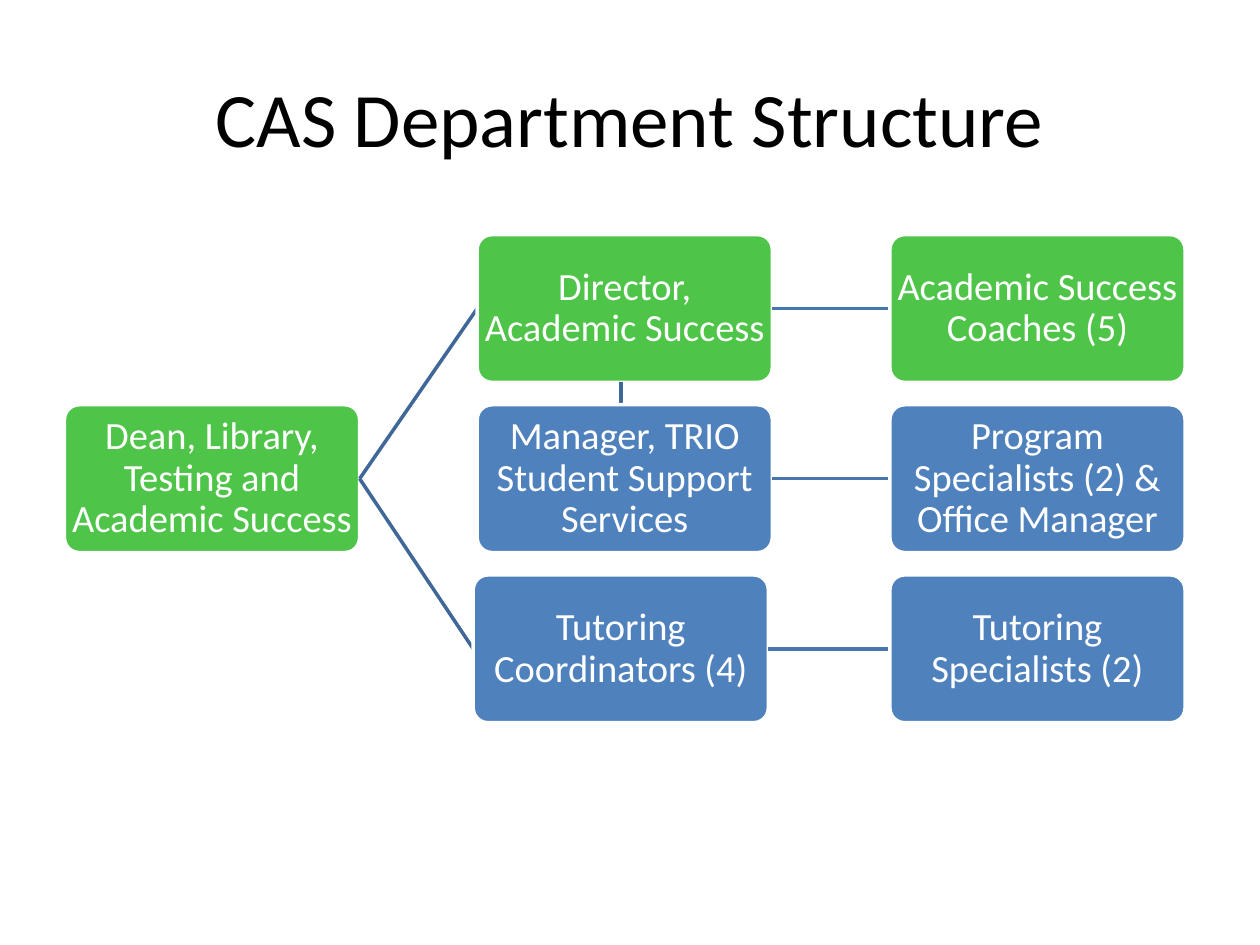
from dataclasses import dataclass

from lxml import etree
from pptx import Presentation
from pptx.dml.color import RGBColor
from pptx.enum.shapes import MSO_CONNECTOR, MSO_SHAPE
from pptx.enum.text import MSO_ANCHOR, PP_ALIGN
from pptx.oxml.ns import qn
from pptx.shapes.autoshape import Shape
from pptx.shapes.connector import Connector
from pptx.slide import Slide
from pptx.util import Cm, Pt

STRAIGHT = MSO_CONNECTOR.STRAIGHT
ROUNDED = MSO_SHAPE.ROUNDED_RECTANGLE
MIDDLE = MSO_ANCHOR.MIDDLE
CENTER = PP_ALIGN.CENTER
LEFT_SITE, RIGHT_SITE = 1, 3


@dataclass(frozen=True)
class Theme:
    font: str = "Calibri"
    title_size: Pt = Pt(44)
    box_size: Pt = Pt(22)
    line_width: Pt = Pt(2)
    black: RGBColor = RGBColor(0, 0, 0)
    white: RGBColor = RGBColor(255, 255, 255)
    green: RGBColor = RGBColor(0x4E, 0xC4, 0x48)
    blue: RGBColor = RGBColor(0x4F, 0x81, 0xBD)
    branch: RGBColor = RGBColor(0x3F, 0x67, 0x97)
    link: RGBColor = RGBColor(0x48, 0x75, 0xAC)


@dataclass(frozen=True)
class Role:
    key: str
    text: str
    column: int
    row: int
    fill: RGBColor
    shift: Cm = Cm(0)


@dataclass(frozen=True)
class Link:
    source: str
    target: str
    color: RGBColor


THEME = Theme()
BOX_WIDTH, BOX_HEIGHT = Cm(5.95), Cm(2.98)
GRID_LEFT, GRID_TOP = Cm(1.3), Cm(4.73)
COLUMN_STEP, ROW_STEP = Cm(8.32), Cm(3.43)
NUDGE = Cm(-0.08)

ROLES = (
    Role("dean", "Dean, Library, Testing and Academic Success", 0, 1, THEME.green),
    Role("director", "Director, Academic Success", 1, 0, THEME.green),
    Role("coaches", "Academic Success Coaches (5)", 2, 0, THEME.green),
    Role("manager", "Manager, TRIO Student Support Services", 1, 1, THEME.blue),
    Role("program", "Program Specialists (2) & Office Manager", 2, 1, THEME.blue),
    Role("coordinators", "Tutoring Coordinators (4)", 1, 2, THEME.blue, NUDGE),
    Role("specialists", "Tutoring Specialists (2)", 2, 2, THEME.blue),
)

LINKS = (
    Link("dean", "director", THEME.branch),
    Link("dean", "coordinators", THEME.branch),
    Link("director", "coaches", THEME.link),
    Link("manager", "program", THEME.link),
    Link("coordinators", "specialists", THEME.link),
)


def write_text(shape: Shape, text: str, size: Pt, color: RGBColor) -> None:
    shape.text_frame.vertical_anchor = MIDDLE
    paragraph = shape.text_frame.paragraphs[0]
    paragraph.alignment = CENTER
    run = paragraph.add_run()
    run.text = text
    run.font.name = THEME.font
    run.font.size = size
    run.font.color.rgb = color


def draw_title(slide: Slide, text: str) -> None:
    title = slide.shapes.title
    title.left, title.top = Cm(1.27), Cm(0.76)
    title.width, title.height = Cm(22.86), Cm(3.18)
    write_text(title, text, THEME.title_size, THEME.black)


def draw_role(slide: Slide, role: Role) -> Shape:
    left = GRID_LEFT + role.column * COLUMN_STEP + role.shift
    top = GRID_TOP + role.row * ROW_STEP
    box = slide.shapes.add_shape(ROUNDED, left, top, BOX_WIDTH, BOX_HEIGHT)
    box.adjustments[0] = 0.1
    box.shadow.inherit = False
    box.fill.solid()
    box.fill.fore_color.rgb = role.fill
    box.line.color.rgb = THEME.white
    box.line.width = THEME.line_width
    frame = box.text_frame
    frame.word_wrap = True
    frame.margin_left = frame.margin_right = Cm(0.04)
    frame.margin_top = frame.margin_bottom = Cm(0.04)
    write_text(box, role.text, THEME.box_size, THEME.white)
    frame.paragraphs[0].line_spacing = 0.9
    return box


def add_line(
    slide: Slide, start: tuple[int, int], end: tuple[int, int], target: Shape, color: RGBColor
) -> Connector:
    connector = slide.shapes.add_connector(STRAIGHT, *start, *end)
    connector.line.color.rgb = color
    connector.line.width = THEME.line_width
    etree.SubElement(connector._element.spPr, qn("a:effectLst"))
    target._element.addprevious(connector._element)
    return connector


def draw_link(slide: Slide, source: Shape, target: Shape, color: RGBColor) -> None:
    start = (source.left + source.width, source.top + source.height // 2)
    end = (target.left, target.top + target.height // 2)
    connector = add_line(slide, start, end, target, color)
    connector.begin_connect(source, RIGHT_SITE)
    connector.end_connect(target, LEFT_SITE)


def draw_drop(slide: Slide, upper: Shape, lower: Shape) -> None:
    center = upper.left + upper.width // 2 + NUDGE
    start = (center, upper.top + upper.height)
    add_line(slide, start, (center, lower.top), lower, THEME.branch)


def main() -> None:
    presentation = Presentation()
    presentation.slide_width, presentation.slide_height = Cm(25.4), Cm(19.05)
    slide = presentation.slides.add_slide(presentation.slide_layouts[5])
    draw_title(slide, "CAS Department Structure")
    boxes = {role.key: draw_role(slide, role) for role in ROLES}
    for link in LINKS:
        draw_link(slide, boxes[link.source], boxes[link.target], link.color)
    draw_drop(slide, boxes["director"], boxes["manager"])
    presentation.save("out.pptx")


if __name__ == "__main__":
    main()
